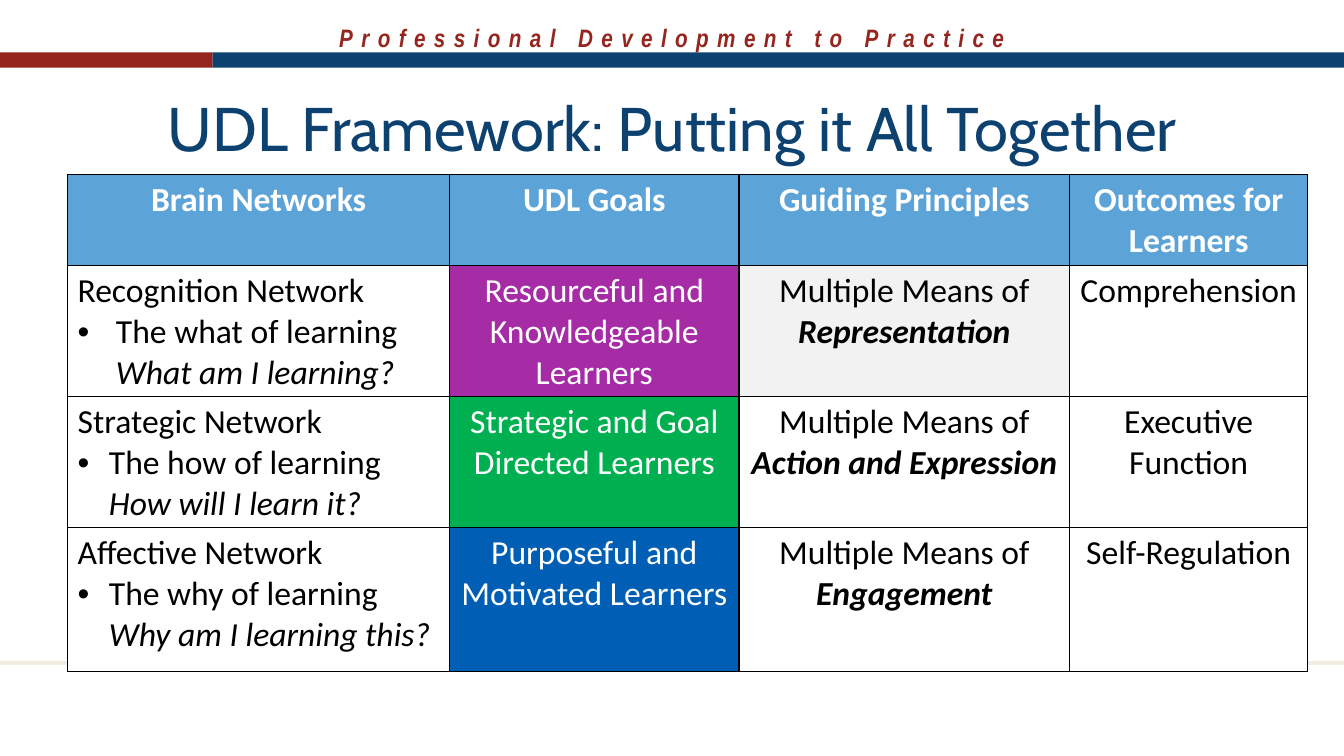
import pptx
import pptx.util
import pptx.dml.color
import pptx.enum.shapes
import pptx.enum.text
import pptx.oxml
import pptx.oxml.ns
from pptx.util import Inches

COLORS = {
    "red": "95261F", "navy": "0D4170", "sand": "F2EDE2", "header": "5CA3D8",
    "purple": "A62CA6", "green": "00B050", "blue": "005EB4",
    "grey": "F2F2F2", "white": "FFFFFF", "black": "000000",
}
CENTER = pptx.enum.text.PP_ALIGN.CENTER
LEFT = pptx.enum.text.PP_ALIGN.LEFT

COLUMN_WIDTHS = [3.79, 2.87, 3.28, 2.36]
ROW_HEIGHTS = [0.87, 1.26, 1.26, 1.43]
HEADERS = ["Brain Networks", "UDL Goals", "Guiding Principles", "Outcomes for Learners"]
# network, focus, question, bullet indent, goal, goal colour, principle, principle colour, outcome
NETWORKS = [
    ("Recognition Network", "The what of learning", "What am I learning?", 0.38,
     "Resourceful and Knowledgeable Learners", "purple", "Representation", "grey",
     "Comprehension"),
    ("Strategic Network", "The how of learning", "How will I learn it?", 0.31,
     "Strategic and Goal Directed Learners", "green", "Action and Expression", "white",
     "Executive Function"),
    ("Affective Network", "The why of learning", "Why am I learning this?", 0.31,
     "Purposeful and Motivated Learners", "blue", "Engagement", "white",
     "Self-Regulation"),
]


def rgb(name):
    return pptx.dml.color.RGBColor.from_string(COLORS[name])


def xml(tag, content="", attrs=""):
    ns = pptx.oxml.ns.nsdecls("a")
    return pptx.oxml.parse_xml(f"<a:{tag} {ns} {attrs}>{content}</a:{tag}>")


class SlideBuilder:
    def __init__(self, prs):
        self.slide = prs.slides.add_slide(prs.slide_layouts[5])
        self.body_font, self.body_size = "Calibri", 24

    def run(self, p, text, color="black", bold=False, italic=False, font=None, size=None):
        r = p.add_run()
        r.text = text
        r.font.name = font or self.body_font
        r.font.size = pptx.util.Pt(size or self.body_size)
        r.font.bold, r.font.italic = bold, italic
        r.font.color.rgb = rgb(color)
        return r

    def title(self, text, x, y, w, h):
        sp = self.slide.shapes.title
        sp.left, sp.top, sp.width, sp.height = map(Inches, (x, y, w, h))
        sp.text_frame.vertical_anchor = pptx.enum.text.MSO_ANCHOR.MIDDLE
        p = sp.text_frame.paragraphs[0]
        p.alignment = CENTER
        self.run(p, text, "navy", font="Cabin", size=44)

    def tagline(self, text, x, y, w, h):
        sp = self.slide.shapes.add_textbox(*map(Inches, (x, y, w, h)))
        sp.text_frame.word_wrap = True
        p = sp.text_frame.paragraphs[0]
        p.alignment = CENTER
        r = self.run(p, text, "red", True, True, "Arial Narrow", 18)
        r.font._element.set("spc", "600")

    def bar(self, color, x, y, w, h):
        sp = self.slide.shapes.add_shape(
            pptx.enum.shapes.MSO_SHAPE.RECTANGLE, *map(Inches, (x, y, w, h)))
        sp.shadow.inherit = False
        sp.fill.solid()
        sp.fill.fore_color.rgb = rgb(color)
        sp.line.fill.background()

    def rule(self, color, x1, y1, x2, y2, width):
        line = self.slide.shapes.add_connector(
            pptx.enum.shapes.MSO_CONNECTOR.STRAIGHT, *map(Inches, (x1, y1, x2, y2)))
        line.line.color.rgb = rgb(color)
        line.line.width = pptx.util.Pt(width)
        line._element.spPr.append(xml("effectLst"))

    def table(self, x, y, widths, heights):
        tbl = self.slide.shapes.add_table(
            len(heights), len(widths), Inches(x), Inches(y),
            Inches(sum(widths)), Inches(sum(heights))).table
        for column, width in zip(tbl.columns, widths):
            column.width = Inches(width)
        for row, height in zip(tbl.rows, heights):
            row.height = Inches(height)
        return tbl

    def cell(self, cell, fill, align=CENTER):
        """Draw the cell's borders and fill, and return its first paragraph."""
        tcPr = cell._tc.get_or_add_tcPr()
        line = f'<a:solidFill><a:srgbClr val="{COLORS["black"]}"/></a:solidFill>'
        for side in ("lnL", "lnR", "lnT", "lnB"):
            tcPr.append(xml(side, line, 'w="12700"'))
        cell.fill.solid()
        cell.fill.fore_color.rgb = rgb(fill)
        p = cell.text_frame.paragraphs[0]
        p.alignment = align
        return p

    def bullet(self, tf, indent):
        p = tf.add_paragraph()
        pPr = p._p.get_or_add_pPr()
        pPr.set("marL", str(Inches(indent)))
        pPr.set("indent", str(-Inches(indent)))
        pPr.append(xml("buFont", attrs='typeface="Arial"'))
        pPr.append(xml("buChar", attrs='char="•"'))
        return p


def main():
    prs = pptx.Presentation()
    prs.slide_width, prs.slide_height = Inches(13.33), Inches(7.5)
    s = SlideBuilder(prs)

    s.tagline("Professional Development to Practice", 0, 0.17, 13.33, 0.4)
    s.bar("red", 0, 0.52, 2.11, 0.15)
    s.bar("navy", 2.11, 0.52, 11.22, 0.15)
    s.rule("sand", 0, 6.58, 13.33, 6.58, 3)
    s.title("UDL Framework: Putting it All Together", 0.67, 0.66, 12, 1.2)

    tbl = s.table(0.67, 1.73, COLUMN_WIDTHS, ROW_HEIGHTS)
    for col, header in enumerate(HEADERS):
        s.run(s.cell(tbl.cell(0, col), "header"), header, "white", bold=True)

    for row, network in enumerate(NETWORKS, start=1):
        name, focus, question, indent, goal, goal_fill, principle, principle_fill, outcome = network
        network_cell, goal_cell, principle_cell, outcome_cell = tbl.rows[row].cells

        s.run(s.cell(network_cell, "white", LEFT), name)
        p = s.bullet(network_cell.text_frame, indent)
        s.run(p, focus)
        p.add_line_break()
        s.run(p, question, italic=True)

        s.run(s.cell(goal_cell, goal_fill), goal, "white")

        p = s.cell(principle_cell, principle_fill)
        s.run(p, "Multiple Means of ")
        s.run(p, principle, bold=True, italic=True)

        s.run(s.cell(outcome_cell, "white"), outcome)

    prs.save("out.pptx")


if __name__ == "__main__":
    main()
